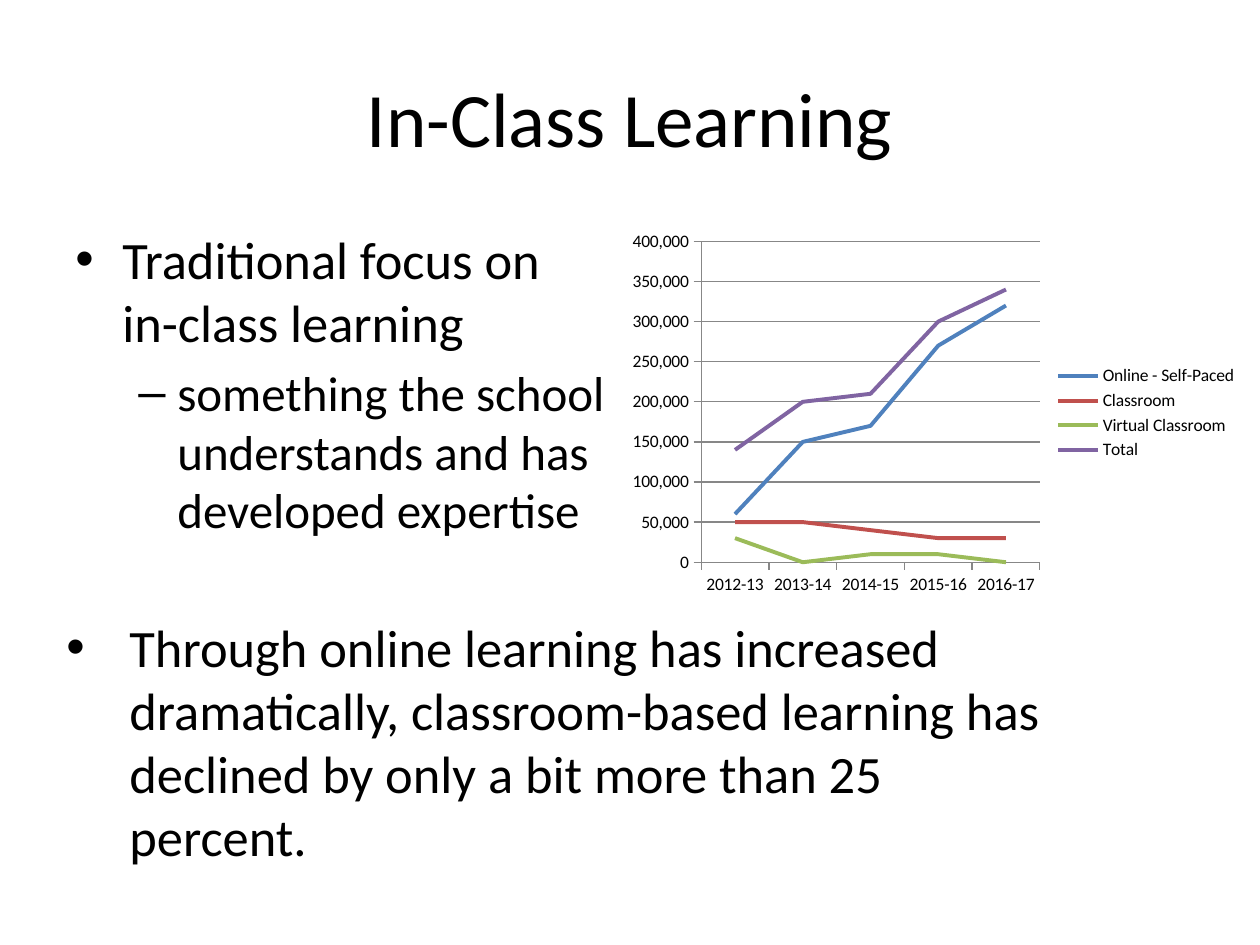
from lxml import etree
from pptx import Presentation, util as u
from pptx.chart.data import CategoryChartData
from pptx.dml.color import RGBColor
from pptx.enum import chart as ch, text as tx
from pptx.oxml import ns

PX = 914400 // 126  # EMU per px
FONT = "Calibri"
YEARS = ["2012-13", "2013-14", "2014-15", "2015-16", "2016-17"]
LINES = [
    ("Online - Self-Paced", "4F81BD", (60000, 150000, 170000, 270000, 320000)),
    ("Classroom", "C0504D", (50000, 50000, 40000, 30000, 30000)),
    ("Virtual Classroom", "9BBB59", (30000, 0, 10000, 10000, 0)),
    ("Total", "8064A2", (140000, 200000, 210000, 300000, 340000)),
]


def px(*nums):
    return [u.Emu(n * PX) for n in nums]


def tint(color, code):
    color.rgb = RGBColor.from_string(code)


def style(font, size):
    font.name, font.size = FONT, u.Pt(size)
    tint(font.color, "000000")


def add_box(slide, area, anchor=tx.MSO_ANCHOR.TOP):
    frame = slide.shapes.add_textbox(*px(*area)).text_frame
    frame.word_wrap = True
    frame.vertical_anchor = anchor
    return frame


def write(para, words, size):
    para.text = words
    style(para.font, size)


def bullet(para, words, size, mark, left, hang, before=0):
    write(para, words, size)
    para.space_before = u.Pt(before)
    props = para._p.get_or_add_pPr()
    props.set("marL", str(left * PX))
    props.set("indent", str(-hang * PX))
    face = etree.Element(ns.qn("a:buFont"), typeface="Arial")
    char = etree.Element(ns.qn("a:buChar"), char=mark)
    # Bullet marks go ahead of the default run properties
    at = props.index(props.find(ns.qn("a:defRPr")))
    props[at:at] = [face, char]


def add_lines(slide, area):
    data = CategoryChartData(number_format="#,##0")
    data.categories = YEARS
    for name, _, vals in LINES:
        data.add_series(name, vals)
    chart = slide.shapes.add_chart(ch.XL_CHART_TYPE.LINE, *px(*area), data).chart
    style(chart.font, 10)
    chart.has_title = False

    # Legend
    chart.has_legend = True
    chart.legend.position = ch.XL_LEGEND_POSITION.RIGHT
    chart.legend.include_in_layout = False

    # Axes and grid
    value = chart.value_axis
    value.minimum_scale, value.maximum_scale, value.major_unit = 0, 400000, 50000
    value.has_major_gridlines = True
    value.tick_labels.number_format = "#,##0"
    value.tick_labels.number_format_is_linked = False
    for axis in (value, chart.category_axis):
        axis.major_tick_mark = ch.XL_TICK_MARK.OUTSIDE
        tint(axis.format.line.color, "878787")
    tint(value.major_gridlines.format.line.color, "878787")

    # Series
    plot = chart.plots[0]
    plot.vary_by_categories = False
    for row, (_, code, _) in zip(plot.series, LINES):
        row.smooth = False
        row.marker.style = ch.XL_MARKER_STYLE.NONE
        row.format.line.width = u.Pt(2.25)
        tint(row.format.line.color, code)


def main():
    deck = Presentation()
    deck.slide_width, deck.slide_height = px(1260, 945)
    slide = deck.slides.add_slide(deck.slide_layouts[6])

    # Title
    title = add_box(slide, (63, 38, 1134, 158), tx.MSO_ANCHOR.MIDDLE).paragraphs[0]
    write(title, "In-Class Learning", 44)
    title.alignment = tx.PP_ALIGN.CENTER

    # Focus, beside the chart
    body = add_box(slide, (63, 221, 557, 624))
    bullet(body.paragraphs[0], "Traditional focus on in-class learning",
           30, "•", 47, 47, 6)
    point = body.add_paragraph()
    point.level = 1
    bullet(point, "something the school understands and has developed expertise",
           28, "–", 102, 39, 5.2)

    # Finding, below the chart
    note = add_box(slide, (54, 609, 1027, 267))
    bullet(note.paragraphs[0],
           "Through online learning has increased dramatically, classroom-based "
           "learning has declined by only a bit more than 25 percent.",
           30, "•", 63, 63)

    add_lines(slide, (620, 224, 630, 378))
    deck.save("out.pptx")


if __name__ == "__main__":
    main()
